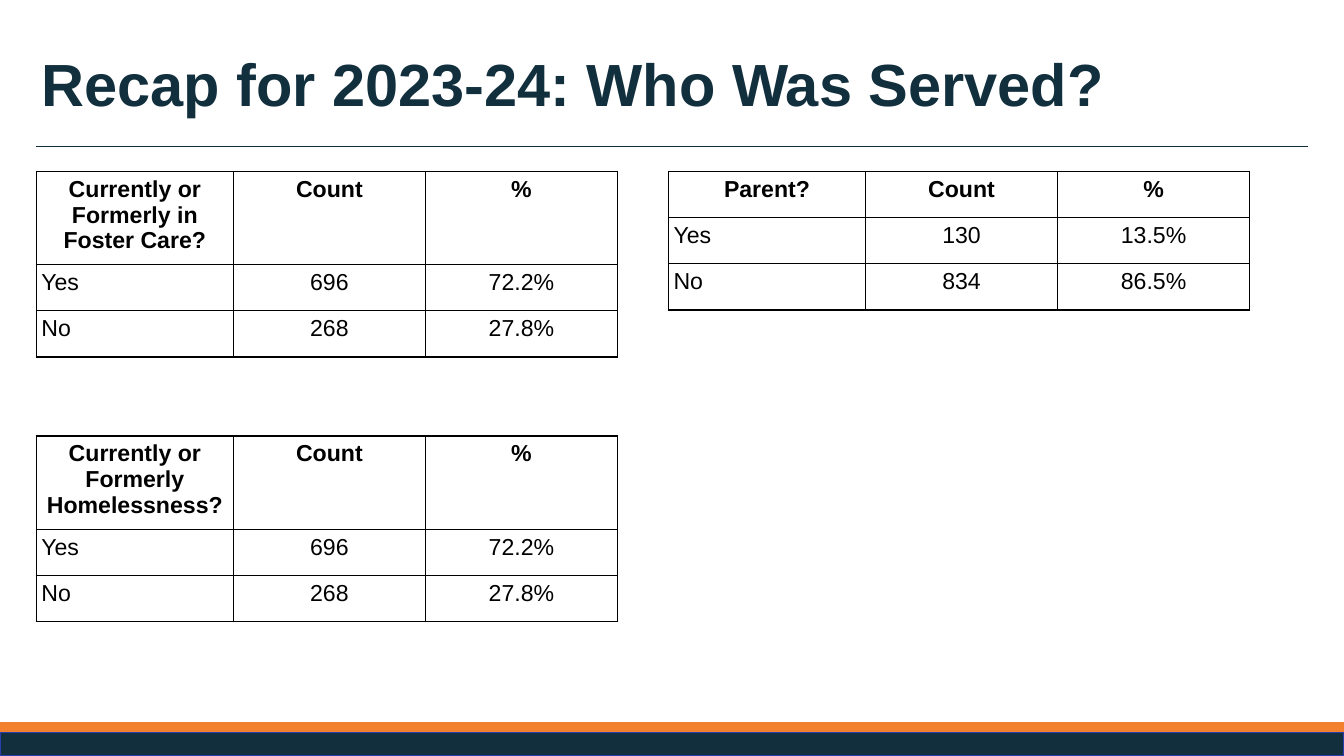
from lxml import etree
from pptx import Presentation
from pptx.dml.color import RGBColor
from pptx.enum.shapes import MSO_CONNECTOR as LINE, MSO_SHAPE as SHAPE
from pptx.enum.text import MSO_ANCHOR as ANCHOR, PP_ALIGN as ALIGN
from pptx.oxml import parse_xml
from pptx.oxml.ns import nsdecls, qn
from pptx.util import Pt

WIDE, HIGH = 1919.52, 1080
LEFT, RIGHT = 51.84, 1867.68
NAVY, ORANGE, BLUE, BLACK = "112F3D", "F2802E", "273EAC", "000000"
COLS = (281.5, 274.3, 274.3)
ROW = 66
TABLES = [
    (LEFT, 244.8, "Currently or Formerly in Foster Care?",
     ("696", "72.2%"), ("268", "27.8%")),
    (LEFT, 622.8, "Currently or Formerly Homelessness?",
     ("696", "72.2%"), ("268", "27.8%")),
    (954.7, 244.8, "Parent?", ("130", "13.5%"), ("834", "86.5%")),
]


def color(code):
    return RGBColor.from_string(code)


def write(frame, text, size=33, ink=BLACK, bold=False, align=ALIGN.LEFT, gap=None):
    frame.word_wrap = True
    para = frame.paragraphs[0]
    para.alignment = align
    para.line_spacing = gap
    run = para.add_run()
    run.text = text
    font = run.font
    font.name, font.size, font.bold = "Arial", Pt(size), bold
    font.color.rgb = color(ink)


def add_bar(slide, top, height, fill, edge=None):
    bar = slide.shapes.add_shape(SHAPE.RECTANGLE, 0, Pt(top), Pt(WIDE), Pt(height))
    bar.shadow.inherit = False
    bar.fill.solid()
    bar.fill.fore_color.rgb = color(fill)
    if edge:
        bar.line.color.rgb = color(edge)
        bar.line.width = Pt(2)
    else:
        bar.line.fill.background()


def add_rule(slide, top):
    rule = slide.shapes.add_connector(
        LINE.STRAIGHT, Pt(LEFT), Pt(top), Pt(RIGHT), Pt(top))
    rule.line.color.rgb = color(NAVY)
    rule.line.width = Pt(0.75)
    etree.SubElement(rule._element.spPr, qn("a:effectLst"))


def add_title(slide, text):
    box = slide.shapes.add_textbox(Pt(LEFT), Pt(50.4), Pt(RIGHT - LEFT), Pt(147.6))
    box.text_frame.vertical_anchor = ANCHOR.MIDDLE
    write(box.text_frame, text, size=85, ink=NAVY, bold=True, gap=0.9)


def add_edges(cell):
    props = cell._tc.get_or_add_tcPr()
    for spot, side in enumerate("LRTB"):
        props.insert(spot, parse_xml(
            f'<a:ln{side} {nsdecls("a")} w="{Pt(2.25)}"><a:solidFill>'
            f'<a:srgbClr val="{BLACK}"/></a:solidFill></a:ln{side}>'))


def add_grid(slide, left, top, head, yes, no):
    rows = [(head, "Count", "%"), ("Yes", *yes), ("No", *no)]
    table = slide.shapes.add_table(
        len(rows), len(COLS), Pt(left), Pt(top),
        Pt(sum(COLS)), Pt(ROW * len(rows))).table
    table.first_row = table.horz_banding = False
    for col, width in zip(table.columns, COLS):
        col.width = Pt(width)
    for r, row in enumerate(rows):
        table.rows[r].height = Pt(ROW)
        for c, text in enumerate(row):
            cell = table.cell(r, c)
            cell.fill.background()
            cell.margin_left = cell.margin_right = Pt(7.2)
            cell.margin_top = cell.margin_bottom = Pt(7.2)
            write(cell.text_frame, text, bold=r == 0,
                  align=ALIGN.CENTER if r == 0 or c else ALIGN.LEFT)
            add_edges(cell)


def main():
    deck = Presentation()
    deck.slide_width, deck.slide_height = Pt(WIDE), Pt(HIGH)
    slide = deck.slides.add_slide(deck.slide_layouts[6])
    add_bar(slide, 1031.76, 14.4, ORANGE)
    add_bar(slide, 1046.16, 33.84, NAVY, edge=BLUE)
    add_rule(slide, 209.5)
    add_title(slide, "Recap for 2023-24: Who Was Served?")
    for item in TABLES:
        add_grid(slide, *item)
    deck.save("out.pptx")


if __name__ == "__main__":
    main()
